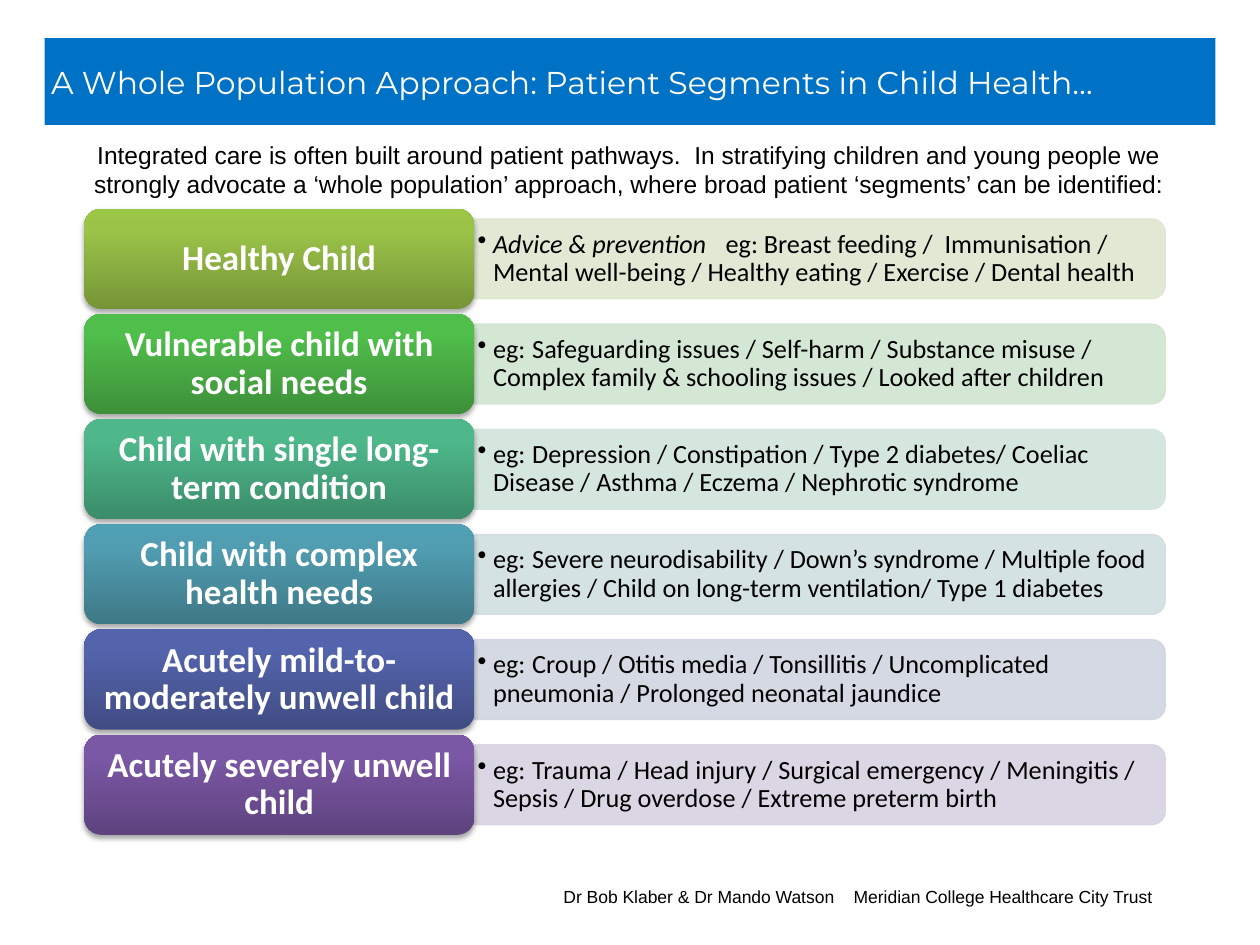
from copy import deepcopy

from lxml import etree
from pptx import Presentation
from pptx import util as u
from pptx.dml import color
from pptx.enum import shapes, text
from pptx.oxml import ns

BLACK, WHITE = "000000", "FFFFFF"
LABEL_LEFT, LABEL_WIDTH, LABEL_HEIGHT = 1.7, 7.86, 2.02
PANEL_LEFT, PANEL_WIDTH, PANEL_HEIGHT = 9.55, 13.94, 1.61
FIRST_TOP, ROW_STEP = 4.21, 2.12
EXAMPLE_TABS = (1.1, 5)

# label, lead words in italics, examples, panel colour, label gradient from the bottom up
SEGMENTS = [
    ("Healthy Child", "Advice & prevention\t",
     "eg: Breast feeding /  Immunisation / Mental well-being / Healthy eating / Exercise / Dental health",
     "DEE7D0", ("769537", "9BC348", "9CC646")),
    ("Vulnerable child with social needs", "",
     "eg:\tSafeguarding issues / Self-harm / Substance misuse / "
     "Complex family & schooling issues / Looked after children",
     "D0E5D0", ("3D9039", "50BE4B", "4FC149")),
    ("Child with single long-term condition", "",
     "eg:\tDepression / Constipation / Type 2 diabetes/ Coeliac Disease / Asthma / Eczema / Nephrotic syndrome",
     "D1E4DC", ("3B8C6A", "4EB88B", "4CBB8C")),
    ("Child with complex health needs", "",
     "eg:\tSevere neurodisability / Down’s syndrome / Multiple food allergies / "
     "Child on long-term ventilation/ Type 1 diabetes",
     "D1DFE2", ("3E7987", "519EB2", "50A0B5")),
    ("Acutely mild-to-moderately unwell child", "",
     "eg:\tCroup / Otitis media / Tonsillitis / Uncomplicated pneumonia / Prolonged neonatal jaundice",
     "D1D5E1", ("404C83", "5464AC", "5363AE")),
    ("Acutely severely unwell child", "",
     "eg:\tTrauma / Head injury / Surgical emergency / Meningitis / Sepsis / Drug overdose / Extreme preterm birth",
     "D7D2E0", ("5E437E", "7B58A6", "7B57A8")),
]


def rgb(hex_code):
    return color.RGBColor.from_string(hex_code)


def add_xml(parent, tag, **attributes):
    return etree.SubElement(parent, ns.qn(tag), {name: str(value) for name, value in attributes.items()})


class SlideBuilder:
    def __init__(self, slide, body_font="Arial", segment_font="Calibri", title_font="Montserrat"):
        self.slide = slide
        self.body_font = body_font
        self.segment_font = segment_font
        self.title_font = title_font

    def shape(self, kind, left, top, width, height):
        shape = self.slide.shapes.add_shape(kind, u.Cm(left), u.Cm(top), u.Cm(width), u.Cm(height))
        shape.shadow.inherit = False
        shape.line.fill.background()
        return shape

    def set_text(self, shape, runs, font, size, hex_code=BLACK, align=text.PP_ALIGN.LEFT,
                 anchor=text.MSO_ANCHOR.MIDDLE, inset=0.13, bold=False, spacing=1, tabs=(), bullet=False):
        """Fill a shape with one paragraph; runs are (words, italic) pairs."""
        frame = shape.text_frame
        frame.word_wrap = True
        frame.vertical_anchor = anchor
        frame.margin_left = frame.margin_right = frame.margin_top = frame.margin_bottom = u.Cm(inset)
        paragraph = frame.paragraphs[0]
        paragraph.alignment = align
        paragraph.line_spacing = spacing
        properties = paragraph._p.get_or_add_pPr()
        if bullet:
            properties.set("marL", str(u.Cm(0.31)))
            properties.set("indent", str(-u.Cm(0.31)))
            add_xml(properties, "a:buChar", char="•")
        if tabs:
            tab_list = add_xml(properties, "a:tabLst")
            for position in tabs:
                add_xml(tab_list, "a:tab", pos=u.Cm(position), algn="l")
        paragraph.font.name = font
        paragraph.font.size = u.Pt(size)
        paragraph.font.bold = bold
        paragraph.font.color.rgb = rgb(hex_code)
        for words, italic in runs:
            run = paragraph.add_run()
            run.text = words
            if italic:
                run.font.italic = True

    def text_box(self, left, top, width, height, runs, font, size, **style):
        box = self.slide.shapes.add_textbox(u.Cm(left), u.Cm(top), u.Cm(width), u.Cm(height))
        self.set_text(box, runs, font, size, **style)

    def title(self, words):
        bar = self.shape(shapes.MSO_SHAPE.RECTANGLE, 0.9, 0.77, 23.6, 1.75)
        bar.fill.solid()
        bar.fill.fore_color.rgb = rgb("0072C6")
        self.set_text(bar, [(words, False)], self.title_font, 18, hex_code=WHITE)

    def panel(self, middle, hex_code, runs):
        """Draw the pale bar, rounded at its right end, with its bulleted examples."""
        centre = PANEL_LEFT + PANEL_WIDTH / 2
        bar = self.shape(shapes.MSO_SHAPE.ROUND_2_SAME_RECTANGLE, centre - PANEL_HEIGHT / 2,
                         middle - PANEL_WIDTH / 2, PANEL_HEIGHT, PANEL_WIDTH)
        bar.rotation = 90
        bar.line.width = u.Pt(0.75)
        for fill in (bar.fill, bar.line.fill):
            fill.solid()
            fill.fore_color.rgb = rgb(hex_code)
        for colour in bar._element.spPr.iter(ns.qn("a:srgbClr")):
            add_xml(colour, "a:alpha", val=90000)
        self.text_box(PANEL_LEFT, middle - 0.69, 13.87, 1.38, runs, self.segment_font, 15,
                      inset=0.08, spacing=0.9, tabs=EXAMPLE_TABS, bullet=True)

    def label(self, middle, words, gradient):
        box = self.shape(shapes.MSO_SHAPE.ROUNDED_RECTANGLE, LABEL_LEFT, middle - LABEL_HEIGHT / 2,
                         LABEL_WIDTH, LABEL_HEIGHT)
        box.fill.gradient()
        box.fill.gradient_angle = 90
        stop_list = box._element.spPr.find(".//" + ns.qn("a:gsLst"))
        stop_list.append(deepcopy(stop_list[-1]))
        for stop, position, hex_code in zip(box.fill.gradient_stops, (0, 0.8, 1), gradient):
            stop.position = position
            stop.color.rgb = rgb(hex_code)
        effects = box._element.spPr.find(ns.qn("a:effectLst"))
        shadow = add_xml(effects, "a:outerShdw", blurRad=u.Pt(3), dist=u.Pt(1.8), dir=5400000, rotWithShape=0)
        add_xml(add_xml(shadow, "a:srgbClr", val=BLACK), "a:alpha", val=35000)
        self.set_text(box, [(words, False)], self.segment_font, 20, hex_code=WHITE,
                      align=text.PP_ALIGN.CENTER, inset=0.2, bold=True, spacing=0.9)


def main():
    presentation = Presentation()
    presentation.slide_width, presentation.slide_height = u.Cm(25.4), u.Cm(19.05)
    builder = SlideBuilder(presentation.slides.add_slide(presentation.slide_layouts[6]))

    builder.title("A Whole Population Approach: Patient Segments in Child Health…")
    for index, (label, lead, examples, panel_colour, gradient) in enumerate(SEGMENTS):
        middle = FIRST_TOP + LABEL_HEIGHT / 2 + index * ROW_STEP
        runs = [(words, italic) for words, italic in ((lead, True), (examples, False)) if words]
        builder.panel(middle, panel_colour, runs)
        builder.label(middle, label, gradient)

    intro = ("Integrated care is often built around patient pathways.  In stratifying children and young people we "
             "strongly advocate a ‘whole population’ approach, where broad patient ‘segments’ can be identified:")
    builder.text_box(0.91, 2.69, 23.55, 1.37, [(intro, False)], builder.body_font, 14,
                     align=text.PP_ALIGN.CENTER, anchor=text.MSO_ANCHOR.TOP)
    credit = "Dr Bob Klaber & Dr Mando Watson\tMeridian College Healthcare City Trust"
    builder.text_box(11.23, 17.73, 12.67, 0.64, [(credit, False)], builder.body_font, 10,
                     anchor=text.MSO_ANCHOR.TOP, tabs=(5.85,))
    presentation.save("out.pptx")


if __name__ == "__main__":
    main()
